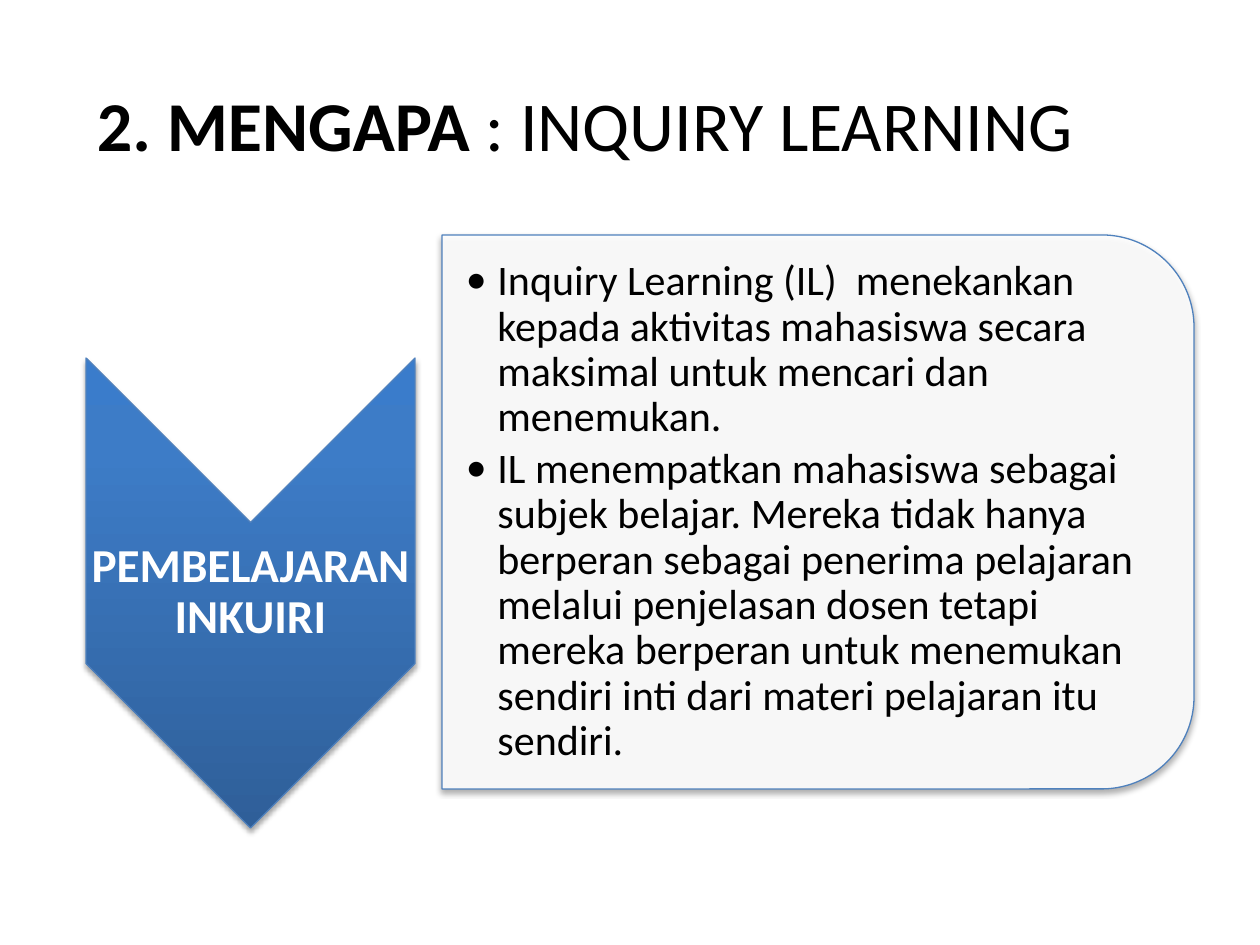
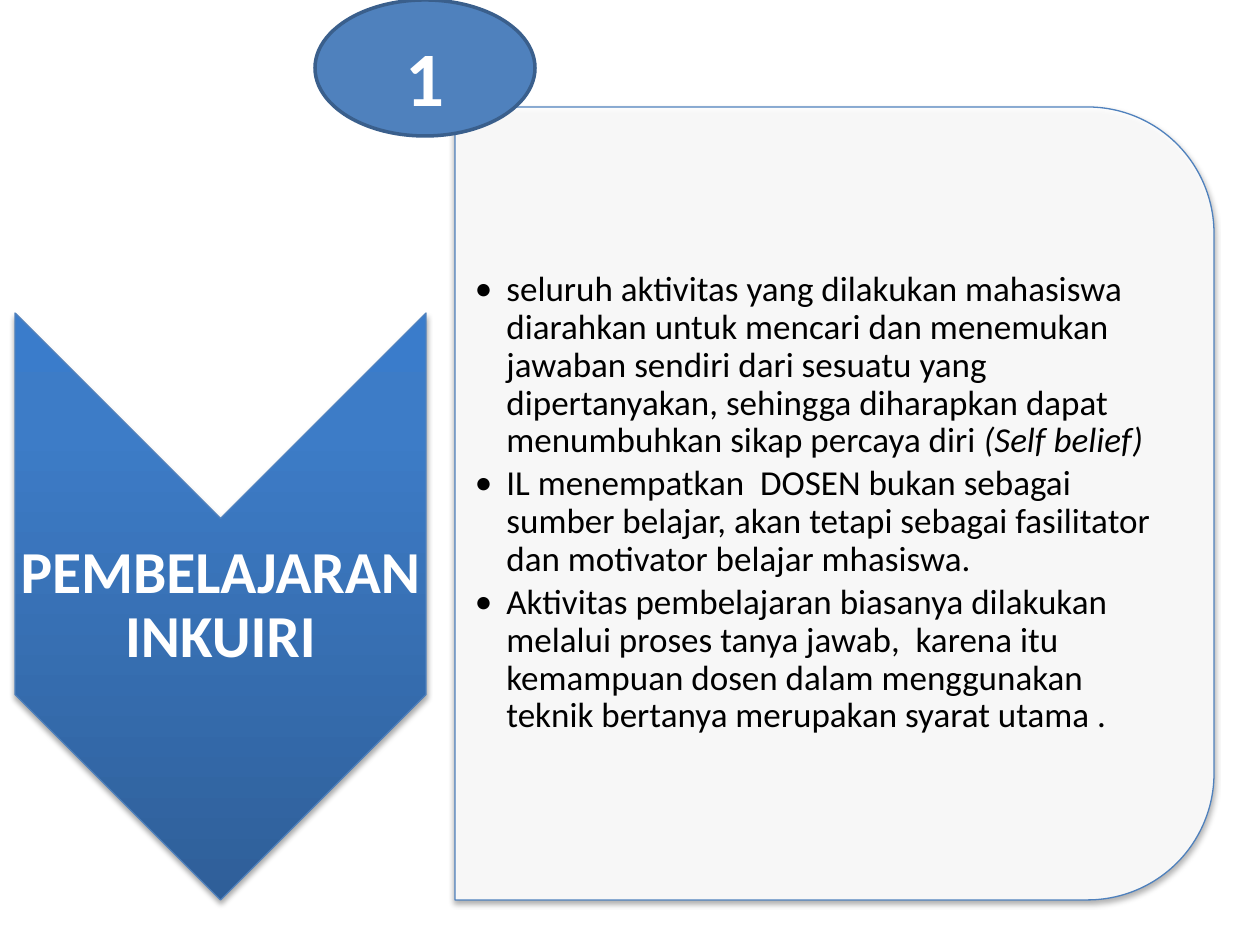
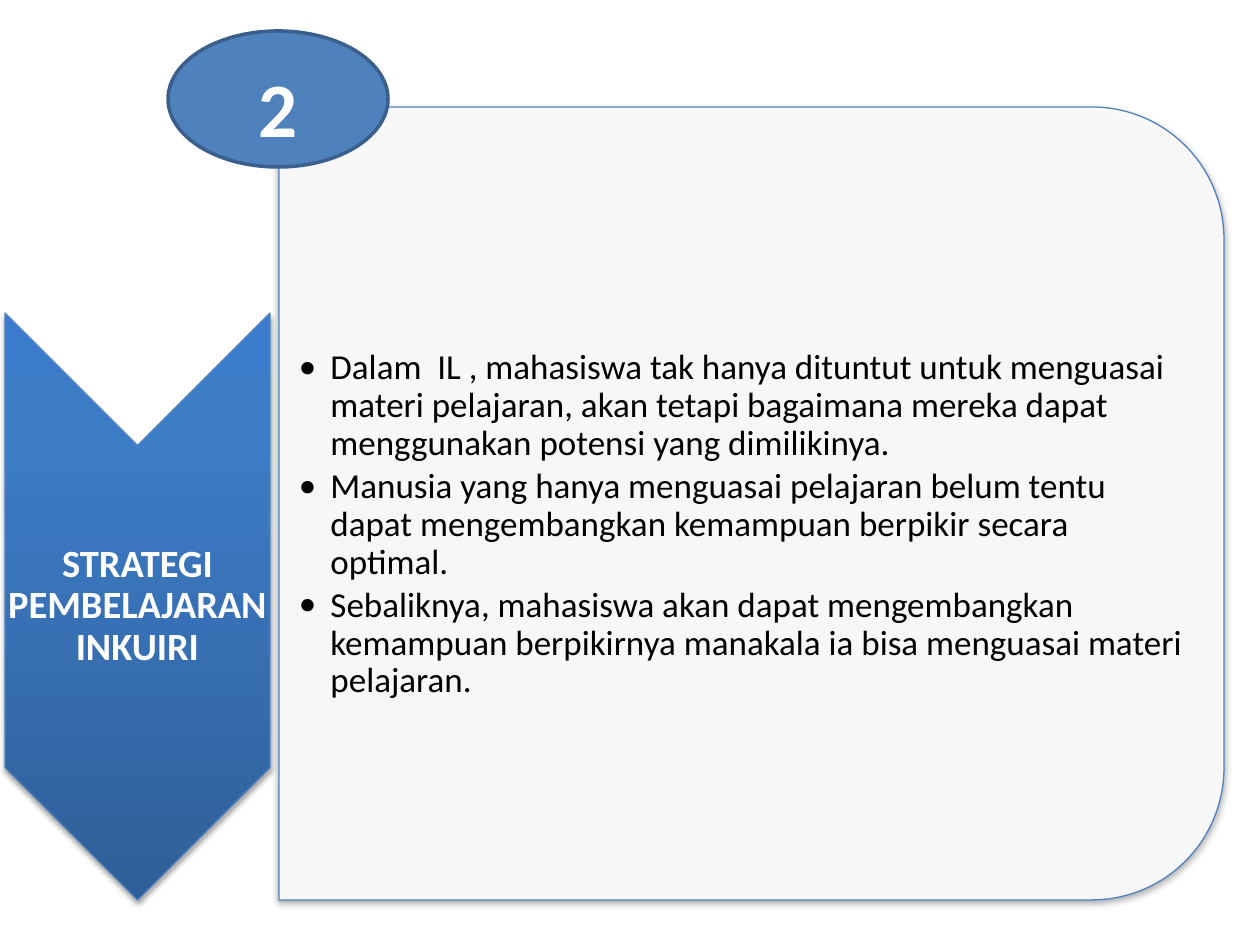
from lxml.etree import SubElement
from pptx import Presentation
from pptx.dml.color import RGBColor
from pptx.enum.shapes import MSO_SHAPE
from pptx.enum.text import MSO_ANCHOR, PP_ALIGN
from pptx.oxml import parse_xml
from pptx.oxml.ns import nsdecls, qn
from pptx.util import Emu, Pt

PX_PER_INCH = 126
FONT = "Calibri"
COLORS = {
    "text": "000000",
    "light": "FFFFFF",
    "blue": "4F81BD",
    "badge_edge": "3A5F8C",
    "shadow": "000000",
}
ARROW_STOPS = [(0, "2F5F99"), (80, "3D7CC7"), (100, "3A7CCB")]
BADGE_SIZE = (220, 136)
LINE_SPACING = 0.9
CORNER_INSET = 0.0488  # share of the panel height taken by its round corner

TITLE = [("2. MENGAPA ", "b"), (": INQUIRY LEARNING", "")]

# Boxes are left, top, width, height in px.
SLIDES = [
    {
        "title": TITLE,
        "arrow": (86, 358, 329, 470),
        "topic": ("PEMBELAJARAN INKUIRI", 27),
        "panel": (442, 235, 752, 554),
        "point_size": 24,
        "text_indent": 24,
        "points": [
            [("Inquiry Learning (IL)  menekankan kepada aktivitas mahasiswa "
              "secara maksimal untuk mencari dan menemukan.", "")],
            [("IL menempatkan mahasiswa sebagai subjek belajar. Mereka tidak "
              "hanya berperan sebagai penerima pelajaran melalui penjelasan "
              "dosen tetapi mereka berperan untuk menemukan sendiri inti dari "
              "materi pelajaran itu sendiri.", "")],
        ],
    },
    {
        "arrow": (15, 313, 411, 587),
        "topic": ("PEMBELAJARAN INKUIRI", 34),
        "panel": (455, 107, 759, 793),
        "point_size": 20,
        "text_indent": 20,
        "points": [
            [("seluruh aktivitas yang dilakukan mahasiswa diarahkan untuk "
              "mencari dan menemukan jawaban sendiri dari sesuatu yang "
              "dipertanyakan, sehingga diharapkan dapat menumbuhkan sikap "
              "percaya diri ", ""), ("(Self belief)", "i")],
            [("IL menempatkan  DOSEN bukan sebagai sumber belajar, akan tetapi "
              "sebagai fasilitator dan motivator belajar mhasiswa.", "")],
            [("Aktivitas pembelajaran biasanya dilakukan melalui proses tanya "
              "jawab,  karena itu kemampuan dosen dalam menggunakan teknik "
              "bertanya merupakan syarat utama .", "")],
        ],
        "badge": ("1", 315, 0),
    },
    {
        "arrow": (5, 313, 265, 587),
        "topic": ("STRATEGI PEMBELAJARAN INKUIRI", 22),
        "panel": (279, 107, 945, 793),
        "point_size": 20,
        "text_indent": 20,
        "text_drop": 43,
        "points": [
            [("Dalam  IL , mahasiswa tak hanya dituntut untuk menguasai materi "
              "pelajaran, akan tetapi bagaimana mereka dapat menggunakan "
              "potensi yang dimilikinya.", "")],
            [("Manusia yang hanya menguasai pelajaran belum tentu dapat "
              "mengembangkan kemampuan berpikir secara optimal.", "")],
            [("Sebaliknya, mahasiswa akan dapat mengembangkan kemampuan "
              "berpikirnya manakala ia bisa menguasai materi pelajaran.", "")],
        ],
        "badge": ("2", 168, 31),
    },
]


def px(length):
    return Emu(round(length * 914400 / PX_PER_INCH))


def rgb(name):
    return RGBColor.from_string(COLORS[name])


def add_runs(paragraph, runs, size, color):
    for text, style in runs:
        run = paragraph.add_run()
        run.text = text
        run.font.name = FONT
        run.font.size = Pt(size)
        run.font.bold = "b" in style
        run.font.italic = "i" in style
        run.font.color.rgb = rgb(color)


def set_frame(frame, insets, anchor=MSO_ANCHOR.MIDDLE):
    """Set wrapping, anchor and the left, top, right, bottom insets."""
    frame.word_wrap = True
    frame.vertical_anchor = anchor
    (frame.margin_left, frame.margin_top,
     frame.margin_right, frame.margin_bottom) = map(px, insets)
    return frame


def add_text_frame(slide, box, insets, anchor=MSO_ANCHOR.MIDDLE):
    return set_frame(slide.shapes.add_textbox(*map(px, box)).text_frame,
                     insets, anchor)


def add_outlined(slide, preset, box, edge, width):
    shape = slide.shapes.add_shape(preset, *map(px, box))
    shape.shadow.inherit = False
    shape.fill.solid()
    shape.line.color.rgb = rgb(edge)
    shape.line.width = Pt(width)
    return shape


def add_turned(slide, preset, box):
    """Add a shadowed shape turned a quarter so that it covers box."""
    left, top, width, height = box
    shift = (width - height) / 2
    shape = add_outlined(slide, preset, (left + shift, top - shift, height, width),
                         "blue", 0.75)
    shape.rotation = 90
    shadow = SubElement(shape._element.spPr.find(qn("a:effectLst")), qn("a:outerShdw"),
                        blurRad=str(Pt(3.1)), dist=str(Pt(1.8)),
                        dir="5400000", rotWithShape="0")
    color = SubElement(shadow, qn("a:srgbClr"), val=COLORS["shadow"])
    SubElement(color, qn("a:alpha"), val="35000")
    return shape


def add_title(slide, runs):
    frame = add_text_frame(slide, (84, 76, 1042, 97), (13, 6, 13, 6), MSO_ANCHOR.TOP)
    add_runs(frame.paragraphs[0], runs, 40, "text")


def add_arrow(slide, box, topic):
    """Add the downward chevron with the topic between its notch and tip."""
    left, top, width, height = box
    chevron = add_turned(slide, MSO_SHAPE.CHEVRON, box)
    stops = "".join(f'<a:gs pos="{position * 1000}"><a:srgbClr val="{color}"/></a:gs>'
                    for position, color in ARROW_STOPS)
    gradient = parse_xml(
        f'<a:gradFill {nsdecls("a")} rotWithShape="0"><a:gsLst>{stops}</a:gsLst>'
        '<a:lin ang="16200000" scaled="0"/></a:gradFill>')
    properties = chevron._element.spPr
    properties.replace(properties.find(qn("a:solidFill")), gradient)

    text, size = topic
    frame = add_text_frame(slide, (left, top + width / 2, width, height - width),
                           (2, 2, 2, 2))
    paragraph = frame.paragraphs[0]
    paragraph.alignment = PP_ALIGN.CENTER
    paragraph.line_spacing = LINE_SPACING
    add_runs(paragraph, [(text, "b")], size, "light")


def add_panel(slide, box, points, size, indent, drop):
    """Add the round-cornered panel with its bullet points."""
    left, top, width, height = box
    panel = add_turned(slide, MSO_SHAPE.ROUND_2_SAME_RECTANGLE, box)
    panel.fill.fore_color.rgb = rgb("light")
    fill_color = panel._element.spPr.find(qn("a:solidFill")).find(qn("a:srgbClr"))
    SubElement(fill_color, qn("a:alpha"), val="90000")

    corner = height * CORNER_INSET
    frame = add_text_frame(
        slide, (left, top + corner, width - corner, height - 2 * corner),
        (indent, 2 + drop, 2, 2))
    for index, runs in enumerate(points):
        paragraph = frame.add_paragraph() if index else frame.paragraphs[0]
        paragraph.line_spacing = LINE_SPACING
        paragraph.space_after = Pt(size * 0.15)
        properties = paragraph._p.get_or_add_pPr()
        properties.set("marL", "228600")
        properties.set("indent", "-228600")
        SubElement(properties, qn("a:buFont"), typeface=FONT)
        SubElement(properties, qn("a:buChar"), char="•")
        add_runs(paragraph, runs, size, "text")


def add_badge(slide, number, left, top):
    badge = add_outlined(slide, MSO_SHAPE.OVAL, (left, top, *BADGE_SIZE),
                         "badge_edge", 2)
    badge.fill.fore_color.rgb = rgb("blue")
    paragraph = set_frame(badge.text_frame, (13, 15, 13, 0)).paragraphs[0]
    paragraph.alignment = PP_ALIGN.CENTER
    add_runs(paragraph, [(number, "b")], 44, "light")


def build_slide(presentation, content):
    slide = presentation.slides.add_slide(presentation.slide_layouts[6])
    add_arrow(slide, content["arrow"], content["topic"])
    add_panel(slide, content["panel"], content["points"], content["point_size"],
              content["text_indent"], content.get("text_drop", 0))
    if "title" in content:
        add_title(slide, content["title"])
    if "badge" in content:
        add_badge(slide, *content["badge"])


def main():
    presentation = Presentation()
    presentation.slide_width = px(1260)
    presentation.slide_height = px(945)
    for content in SLIDES:
        build_slide(presentation, content)
    presentation.save("out.pptx")


if __name__ == "__main__":
    main()
